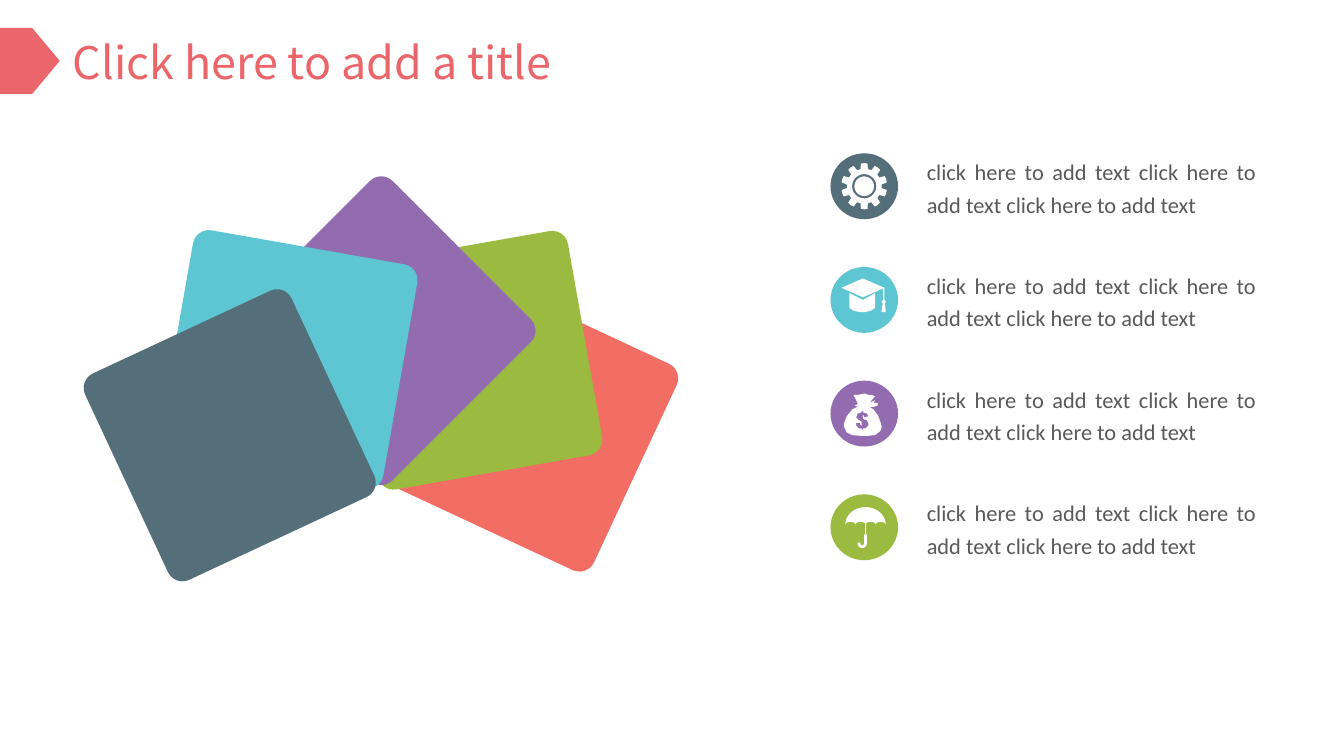
from dataclasses import dataclass
from math import cos, radians, sin

from pptx import Presentation
from pptx.dml.color import RGBColor
from pptx.enum.shapes import MSO_SHAPE
from pptx.enum.text import MSO_ANCHOR, MSO_AUTO_SIZE, PP_ALIGN
from pptx.util import Pt

PENTAGON = MSO_SHAPE.PENTAGON
ROUNDED = MSO_SHAPE.ROUNDED_RECTANGLE
OVAL = MSO_SHAPE.OVAL
RECTANGLE = MSO_SHAPE.RECTANGLE
MIDDLE = MSO_ANCHOR.MIDDLE
LEFT = PP_ALIGN.LEFT
JUSTIFY = PP_ALIGN.JUSTIFY
NO_FIT = MSO_AUTO_SIZE.NONE
GROW = MSO_AUTO_SIZE.SHAPE_TO_FIT_TEXT

ICON_UNIT = 0.72


@dataclass(frozen=True)
class Theme:
    accent: str = "EB666B"
    coral: str = "F26D64"
    green: str = "9BBB40"
    purple: str = "936CAF"
    cyan: str = "5EC6D3"
    slate: str = "546E7A"
    white: str = "FFFFFF"
    body: str = "595959"
    title_font: str = "Noto Sans CJK SC"
    body_font: str = "Calibri"
    title_size: float = 24
    body_size: float = 12


class SlideBuilder:
    def __init__(self, slide, theme):
        self.slide = slide
        self.theme = theme

    def paint(self, shape, color):
        shape.shadow.inherit = False
        shape.fill.solid()
        shape.fill.fore_color.rgb = RGBColor.from_string(color)
        shape.line.fill.background()

    def style(self, paragraph, font, size, color, align):
        paragraph.alignment = align
        paragraph.font.name = font
        paragraph.font.size = Pt(size)
        paragraph.font.color.rgb = RGBColor.from_string(color)

    def title(self, text, left, top, width, height):
        title = self.slide.shapes.title
        title.left, title.top, title.width, title.height = map(Pt, (left, top, width, height))
        frame = title.text_frame
        frame.text = text
        frame.auto_size = NO_FIT
        frame.word_wrap = False
        frame.vertical_anchor = MIDDLE
        self.style(frame.paragraphs[0], self.theme.title_font, self.theme.title_size,
                   self.theme.accent, LEFT)

    def preset(self, kind, left, top, width, height, color, adjust=None, tilt=0):
        shape = self.slide.shapes.add_shape(kind, *map(Pt, (left, top, width, height)))
        if adjust is not None:
            shape.adjustments[0] = adjust
        shape.rotation = tilt
        self.paint(shape, color)

    def glyph(self, center_x, center_y, *contours):
        unit = Pt(ICON_UNIT)
        scaled = [[(x * unit, y * unit) for x, y in contour] for contour in contours]
        builder = self.slide.shapes.build_freeform(*scaled[0][0], scale=1.0)
        builder.add_line_segments(scaled[0][1:], close=True)
        for contour in scaled[1:]:
            builder.move_to(*contour[0])
            builder.add_line_segments(contour[1:], close=True)
        self.paint(builder.convert_to_shape(Pt(center_x), Pt(center_y)), self.theme.white)

    def paragraph(self, text, left, top, width, height):
        box = self.slide.shapes.add_textbox(*map(Pt, (left, top, width, height)))
        frame = box.text_frame
        frame.word_wrap = True
        frame.auto_size = GROW
        frame.text = text
        frame.paragraphs[0].line_spacing = 1.2
        self.style(frame.paragraphs[0], self.theme.body_font, self.theme.body_size,
                   self.theme.body, JUSTIFY)


def arc(x, y, radius_x, radius_y, start=0, end=360, steps=36):
    angles = [radians(start + (end - start) * i / steps) for i in range(steps + 1)]
    return [(x + radius_x * cos(a), y + radius_y * sin(a)) for a in angles]


def draw_gear(builder, x, y):
    profile = ((-12, 13), (-8.5, 17), (0, 17.2), (8.5, 17), (12, 13))
    rim = [(radius * sin(radians(36 * tooth + turn)), -radius * cos(radians(36 * tooth + turn)))
           for tooth in range(10) for turn, radius in profile]
    builder.glyph(x, y, rim, arc(0, 0, 9, 9), arc(0, 0, 7.3, 7.3))


def draw_cap(builder, x, y):
    builder.glyph(x, y, [(-1, -2), (-17, -9), (-1, -16), (15, -9)])
    builder.glyph(x, y, [(8, -5), (-1, 0), (-11, -5), (-11, 6), (-8, 8), (-4, 9),
                         (1, 9), (5, 8), (8, 6)])
    builder.glyph(x, y, [(13, 9), (13.3, 5), (14, 2), (15, 2), (15.7, 5), (16, 9)])
    for kind, left, top, width, height in ((RECTANGLE, 14, -9, 1, 11), (OVAL, 13, 0, 3, 3)):
        builder.preset(kind, x + left * ICON_UNIT, y + top * ICON_UNIT,
                       width * ICON_UNIT, height * ICON_UNIT, builder.theme.white)


def draw_bag(builder, x, y):
    sack = [(12, 6), (10, 1), (7, -3), (4, -5), (7, -5), (10, -6), (10, -8), (7, -8),
            (8, -10), (4, -8), (8, -13), (5, -14), (3, -14), (0, -15), (-4, -14),
            (-8, -14), (-7, -12), (-5, -8), (-5, -7), (-7, -6), (-5, -5), (-9, -3),
            (-13, 2), (-15, 7), (-15, 10), (-13, 14), (-9, 16), (-3, 16.5),
            (3, 16.5), (8, 16), (12, 13), (13, 10)]
    dollar = [(3, 9), (2, 10), (1, 11), (-1, 11), (-1, 12), (-2, 12), (-2, 11), (-4, 11),
              (-5, 10), (-6, 9), (-6, 7), (-3, 7), (-3, 8), (-2, 9), (-2, 6), (-4, 5),
              (-5, 4), (-6, 3), (-5, 0), (-2, -1), (-2, -2), (-1, -2), (-1, -1), (2, 0),
              (3, 2), (0, 3), (0, 2), (-1, 1), (-1, 4), (2, 5), (3, 7)]
    builder.glyph(x, y, sack, dollar)


def draw_umbrella(builder, x, y):
    canopy = arc(1, -2, 15, 13, 180, 360)
    for middle in (12.25, 4.75, -2.75, -10.25):
        canopy += arc(middle, -2, 3.75, 2, 0, -180, 10)
    builder.glyph(x, y, canopy)
    stem = [(0.6, -3), (1.4, -3), (1.4, 5), (2, 6), (2, 12)]
    hook = arc(-1.5, 11.5, 3.5, 4, 0, 180, 12) + arc(-1.5, 11.5, 1.5, 2, 180, 0, 12)
    builder.glyph(x, y, stem + hook + [(0, 6), (0.6, 5)])


def main():
    theme = Theme()
    deck = Presentation()
    deck.slide_width, deck.slide_height = Pt(720), Pt(405)
    builder = SlideBuilder(deck.slides.add_slide(deck.slide_layouts[5]), theme)

    builder.preset(PENTAGON, 0, 15, 32, 35.3, theme.accent, adjust=0.46)
    builder.title("Click here to add a title", 31.9, 15, 283, 36)

    card_side = 122
    fan = (
        (285.1, 228, 25, theme.coral),
        (253.4, 193, -10, theme.green),
        (204.2, 177.2, 45, theme.purple),
        (154.4, 192.6, 10, theme.cyan),
        (123.1, 233.2, -25, theme.slate),
    )
    for center_x, center_y, tilt, color in fan:
        builder.preset(ROUNDED, center_x - card_side / 2, center_y - card_side / 2,
                       card_side, card_side, color, adjust=0.07, tilt=tilt)

    badge_x, first_y, row_step = 463, 99.8, 60.9
    badge_width, badge_height = 36.2, 35.3
    rows = ((theme.slate, draw_gear), (theme.cyan, draw_cap),
            (theme.purple, draw_bag), (theme.green, draw_umbrella))
    caption = " ".join(["click here to add text"] * 3)
    for row, (color, draw_icon) in enumerate(rows):
        center_y = first_y + row * row_step
        builder.preset(OVAL, badge_x - badge_width / 2, center_y - badge_height / 2,
                       badge_width, badge_height, color)
        draw_icon(builder, badge_x, center_y)
        builder.paragraph(caption, 489.4, center_y - 21.3, 190.8, 42.4)

    deck.save("out.pptx")


if __name__ == "__main__":
    main()
